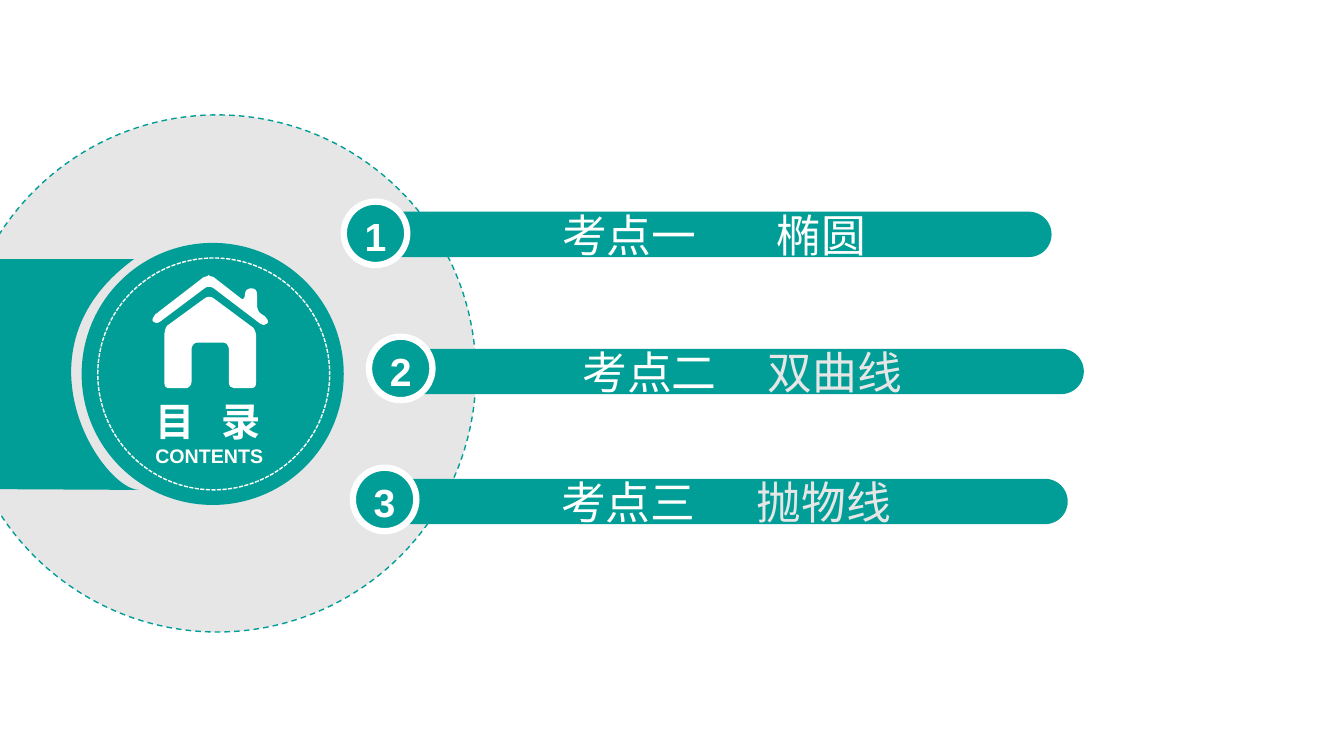
import copy

import pptx
import pptx.dml.color
import pptx.enum.dml
import pptx.enum.shapes
import pptx.enum.text
import pptx.oxml
import pptx.oxml.ns
import pptx.util

Inches = pptx.util.Inches
Pt = pptx.util.Pt
RGBColor = pptx.dml.color.RGBColor
Shape = pptx.enum.shapes.MSO_SHAPE
Dash = pptx.enum.dml.MSO_LINE
Align = pptx.enum.text.PP_ALIGN
Anchor = pptx.enum.text.MSO_ANCHOR
qn = pptx.oxml.ns.qn

TEAL = RGBColor(0x00, 0x9E, 0x96)
GRAY = RGBColor(0xE7, 0xE6, 0xE6)
WHITE = RGBColor(0xFF, 0xFF, 0xFF)

BOX = {"word_wrap": True, "vertical_anchor": Anchor.MIDDLE,
       "auto_size": pptx.enum.text.MSO_AUTO_SIZE.NONE}
LARGE = {"name": "Arial", "size": Pt(32), "bold": False}
HEAD = {"name": "Arial", "size": Pt(28), "bold": True}
SMALL = {"name": "Arial", "size": Pt(14), "bold": True}

# Bar left and top, badge left and top, text inset, tab stop, label, topic
ITEMS = [
    (3.66, 2.10, 3.41, 2.00, 1.85, 2.13, "考点一", "椭圆", WHITE),
    (3.98, 3.46, 3.66, 3.34, 1.73, 1.84, "考点二", "双曲线", GRAY),
    (3.82, 4.75, 3.50, 4.64, 1.68, 1.94, "考点三", "抛物线", GRAY),
]

# A step is a line's end (x, y), or a curve's two controls and its end.
BAND = [(-0.5, 2.57), (1.33, 2.57), (0.09, 3.47, 1.02, 4.86, 1.38, 4.86),
        (-0.5, 4.85)]
WALLS = [
    (2.12, 2.96), (2.10, 2.94, 2.05, 2.94, 2.03, 2.96),
    (1.66, 3.23), (1.64, 3.25, 1.63, 3.29, 1.63, 3.33),
    (1.63, 3.79), (1.63, 3.83, 1.64, 3.85, 1.68, 3.85),
    (1.85, 3.85), (1.86, 3.85, 1.90, 3.83, 1.90, 3.79),
    (1.90, 3.46), (1.90, 3.44, 1.92, 3.40, 1.95, 3.40),
    (2.22, 3.40), (2.25, 3.40, 2.27, 3.44, 2.27, 3.46),
    (2.27, 3.79), (2.27, 3.83, 2.29, 3.85, 2.32, 3.85),
    (2.49, 3.85), (2.53, 3.85, 2.54, 3.83, 2.54, 3.79),
    (2.54, 3.33), (2.54, 3.31, 2.53, 3.27, 2.51, 3.25),
]
ROOF = [
    (2.60, 3.12), (2.56, 3.10, 2.55, 3.06, 2.55, 3.02),
    (2.55, 2.92), (2.55, 2.88, 2.53, 2.86, 2.49, 2.86),
    (2.48, 2.86), (2.46, 2.86, 2.43, 2.88, 2.43, 2.92),
    (2.43, 2.96, 2.41, 2.98, 2.39, 2.96),
    (2.12, 2.75), (2.10, 2.75, 2.07, 2.73, 2.07, 2.73),
    (2.07, 2.73, 2.05, 2.75, 2.02, 2.75),
    (1.54, 3.12), (1.52, 3.14, 1.50, 3.18, 1.52, 3.19),
    (1.54, 3.21, 1.56, 3.21, 1.59, 3.19),
    (2.03, 2.86), (2.05, 2.84, 2.09, 2.84, 2.12, 2.86),
    (2.58, 3.21), (2.60, 3.23, 2.63, 3.23, 2.65, 3.21),
    (2.67, 3.19, 2.65, 3.16, 2.63, 3.14),
]


def apply(item, values):
    for name, value in values.items():
        setattr(item, name, value)


def paint(shape, fill=None, line=None, width=1, dash=None):
    shape.shadow.inherit = False
    if fill is None:
        shape.fill.background()
    else:
        shape.fill.solid()
        shape.fill.fore_color.rgb = fill
    if line is None:
        shape.line.fill.background()
    else:
        shape.line.color.rgb = line
        apply(shape.line, {"width": Pt(width), "dash_style": dash})


def add_disc(shapes, left, top, size, **look):
    box = [Inches(v) for v in (left, top, size, size)]
    paint(shapes.add_shape(Shape.OVAL, *box), **look)


def bend(shape, steps):
    """Turn the outline's lines into curves where a step has controls."""
    nodes = list(shape._element.iter(qn("a:lnTo")))
    for node, step in zip(nodes, steps[1:]):
        if len(step) == 2:
            continue
        node.tag = qn("a:cubicBezTo")
        for i in (0, 1):
            point = copy.deepcopy(node[-1])
            point.set("x", str(Inches(step[2 * i]) - shape.left))
            point.set("y", str(Inches(step[2 * i + 1]) - shape.top))
            node.insert(i, point)


def add_free(shapes, steps, fill):
    ends = [(Inches(step[-2]), Inches(step[-1])) for step in steps]
    pen = shapes.build_freeform(*ends[0])
    pen.add_line_segments(ends[1:])
    shape = pen.convert_to_shape()
    bend(shape, steps)
    paint(shape, fill)


def add_run(para, text, font, color=WHITE):
    run = para.add_run()
    run.text = text
    apply(run.font, font)
    run.font.color.rgb = color


def set_tab(para, stop):
    props = para._p.get_or_add_pPr()
    tabs = pptx.oxml.parse_xml(
        f'<a:tabLst {pptx.oxml.ns.nsdecls("a")}>'
        f'<a:tab pos="{Inches(stop)}" algn="l"/></a:tabLst>')
    props.append(tabs)


def add_item(slide, number, item):
    left, top, x, y, inset, stop, label, topic, color = item
    shapes = slide.shapes.add_group_shape().shapes
    bar = shapes.add_shape(Shape.ROUNDED_RECTANGLE, Inches(left), Inches(top),
                           Inches(6.77), Inches(0.45))
    bar.adjustments[0] = 0.5
    paint(bar, TEAL)
    apply(bar.text_frame, {**BOX, "margin_left": Inches(inset)})
    para = bar.text_frame.paragraphs[0]
    para.alignment = Align.LEFT
    set_tab(para, stop)
    add_run(para, label + "\t", LARGE)
    add_run(para, topic, LARGE, color)

    add_disc(shapes, x, y, 0.63, fill=TEAL, line=WHITE, width=4.5)
    badge = shapes.add_textbox(Inches(x), Inches(y + 0.07),
                               Inches(0.63), Inches(0.54))
    apply(badge.text_frame, BOX)
    para = badge.text_frame.paragraphs[0]
    para.alignment = Align.CENTER
    add_run(para, str(number), HEAD)


def add_title(slide):
    title = slide.shapes.title
    apply(title, {"left": Inches(1.44), "top": Inches(3.85),
                  "width": Inches(1.42), "height": Inches(0.88)})
    frame = title.text_frame
    apply(frame, BOX)
    first, second = frame.paragraphs[0], frame.add_paragraph()
    for para in (first, second):
        apply(para, {"alignment": Align.LEFT, "line_spacing": 1.0})
    set_tab(first, 0.66)
    add_run(first, "目\t录", HEAD)
    add_run(second, "CONTENTS", SMALL)
    # Bring the title in front of the discs
    slide.shapes._spTree.append(title._element)


def main():
    deck = pptx.Presentation()
    apply(deck, {"slide_width": Inches(13.33), "slide_height": Inches(7.5)})
    slide = deck.slides.add_slide(deck.slide_layouts[5])
    shapes = slide.shapes
    add_disc(shapes, -0.41, 1.14, 5.13, fill=GRAY, line=TEAL, dash=Dash.DASH)
    add_free(shapes, BAND, TEAL)
    add_disc(shapes, 0.81, 2.41, 2.6, fill=TEAL)
    house = shapes.add_group_shape().shapes
    for part in (WALLS, ROOF):
        add_free(house, part, WHITE)
    add_title(slide)
    add_disc(shapes, 0.97, 2.56, 2.3, line=WHITE, dash=Dash.SQUARE_DOT)
    for number, item in enumerate(ITEMS, 1):
        add_item(slide, number, item)
    deck.save("out.pptx")


if __name__ == "__main__":
    main()
